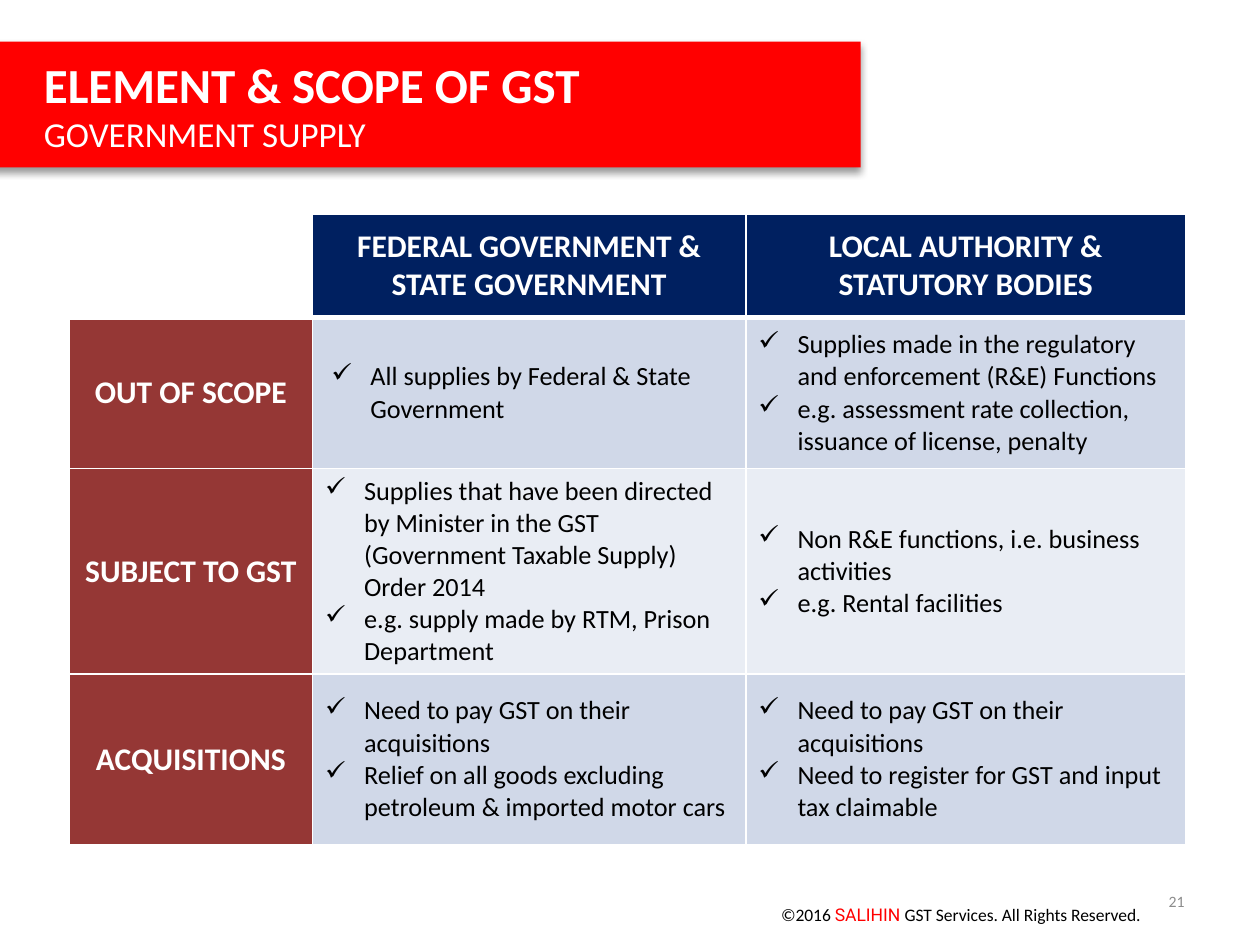
from lxml import etree
from pptx import Presentation
from pptx.dml.color import RGBColor
from pptx.enum.shapes import MSO_SHAPE
from pptx.enum.text import MSO_ANCHOR, PP_ALIGN
from pptx.oxml.ns import qn
from pptx.util import Inches, Pt

RECT = MSO_SHAPE.RECTANGLE
MIDDLE = MSO_ANCHOR.MIDDLE
LEFT, CENTER, RIGHT = PP_ALIGN.LEFT, PP_ALIGN.CENTER, PP_ALIGN.RIGHT

WHITE = RGBColor(0xFF, 0xFF, 0xFF)
BLACK = RGBColor(0, 0, 0)
RED = RGBColor(0xFF, 0, 0)
NAVY = RGBColor(0, 0x20, 0x60)
BRICK = RGBColor(0x95, 0x37, 0x35)
GRAY = RGBColor(0x8C, 0x8C, 0x8C)
BANDS = (RGBColor(0xD0, 0xD8, 0xE8), RGBColor(0xE9, 0xED, 0xF4))

TITLE = [("ELEMENT & SCOPE OF GST", 28, True), ("GOVERNMENT SUPPLY", 20, False)]
NOTICE = [
    ("©2016 ", "Calibri", BLACK),
    ("SALIHIN ", "Roboto", RED),
    ("GST Services. All Rights Reserved.", "Calibri", BLACK),
]
PAGE = "21"
COLS = [1.93, 3.44, 3.49]
ROWS = [0.82, 1.2, 1.6, 1.35]
GRID = [
    [
        [],
        ["FEDERAL GOVERNMENT &", "STATE GOVERNMENT"],
        ["LOCAL AUTHORITY & STATUTORY BODIES"],
    ],
    [
        ["OUT OF SCOPE"],
        ["All supplies by Federal & State Government"],
        [
            "Supplies made in the regulatory and enforcement (R&E) Functions",
            "e.g. assessment rate collection, issuance of license, penalty",
        ],
    ],
    [
        ["SUBJECT TO GST"],
        [
            "Supplies that have been directed by Minister in the GST "
            "(Government Taxable Supply) Order 2014",
            "e.g. supply made by RTM, Prison Department",
        ],
        ["Non R&E functions, i.e. business activities", "e.g. Rental facilities"],
    ],
    [
        ["ACQUISITIONS"],
        [
            "Need to pay GST on their acquisitions",
            "Relief on all goods excluding petroleum & imported motor cars",
        ],
        [
            "Need to pay GST on their acquisitions",
            "Need to register for GST and input tax claimable",
        ],
    ],
]


def style(para, size, color, bold=False, align=LEFT):
    para.alignment = align
    font = para.font
    font.name, font.size, font.bold = "Calibri", Pt(size), bold
    font.color.rgb = color


def indent(para, left, first=0):
    props = para._p.get_or_add_pPr()
    props.set("marL", str(Inches(left)))
    props.set("indent", str(Inches(first)))
    return props


def lines(frame, texts):
    for i, text in enumerate(texts):
        para = frame.paragraphs[0] if i == 0 else frame.add_paragraph()
        para.text = text
        yield para


def box(slide, left, top, width, height):
    frame = slide.shapes.add_textbox(*map(Inches, (left, top, width, height))).text_frame
    frame.word_wrap = True
    frame.vertical_anchor = MIDDLE
    return frame


def border(cell, widths):
    props = cell._tc.get_or_add_tcPr()
    for side, width in widths.items():
        line = etree.SubElement(props, qn(f"a:ln{side}"), w=str(Pt(width)))
        fill = etree.SubElement(line, qn("a:solidFill"))
        etree.SubElement(fill, qn("a:srgbClr"), val=str(WHITE))


def banner(slide):
    shape = slide.shapes.add_shape(RECT, *map(Inches, (-0.25, 0.33, 7.08, 1)))
    shape.fill.solid()
    shape.fill.fore_color.rgb = RED
    shape.line.fill.background()
    shape.shadow.inherit = False
    glow = etree.SubElement(
        shape._element.spPr.find(qn("a:effectLst")), qn("a:outerShdw"),
        blurRad=str(Pt(4)), dist=str(Pt(3)), dir="5400000", rotWithShape="0")
    tint = etree.SubElement(glow, qn("a:srgbClr"), val=str(BLACK))
    etree.SubElement(tint, qn("a:alpha"), val="40000")
    frame = shape.text_frame
    frame.vertical_anchor = MIDDLE
    for para, (_, size, bold) in zip(lines(frame, [t[0] for t in TITLE]), TITLE):
        indent(para, 0.5)
        style(para, size, WHITE, bold)


def fill_cell(cell, row, col, texts):
    head = row == 0 or col == 0
    border(cell, {"L": 1, "R": 1, "T": 3 if row == 1 else 1, "B": 3 if row == 0 else 1})
    cell.fill.solid()
    if row == 0:
        color = NAVY if col else WHITE
    else:
        color = BANDS[(row - 1) % 2] if col else BRICK
    cell.fill.fore_color.rgb = color
    cell.vertical_anchor = MIDDLE
    for para in lines(cell.text_frame, texts):
        if head:
            style(para, 18, WHITE, True, CENTER)
        else:
            props = indent(para, 0.31, -0.31)
            etree.SubElement(props, qn("a:buChar"), char="✓")
            style(para, 15, BLACK)


def matrix(slide):
    table = slide.shapes.add_table(
        len(ROWS), len(COLS), Inches(0.55), Inches(1.7),
        Inches(sum(COLS)), Inches(sum(ROWS))).table
    for col, width in zip(table.columns, COLS):
        col.width = Inches(width)
    for row, height in zip(table.rows, ROWS):
        row.height = Inches(height)
    for r, cells in enumerate(GRID):
        for c, texts in enumerate(cells):
            fill_cell(table.cell(r, c), r, c, texts)
    inset = table.cell(1, 1)
    inset.margin_left = inset.margin_right = Inches(0.15)
    inset.margin_top = inset.margin_bottom = Inches(0.15)


def footer(slide):
    para = box(slide, 6.1, 7.06, 3.21, 0.4).paragraphs[0]
    for text, name, color in NOTICE:
        run = para.add_run()
        run.text = text
        run.font.name, run.font.size = name, Pt(10)
        run.font.color.rgb = color
    para = box(slide, 7.17, 6.95, 2.33, 0.4).paragraphs[0]
    para.text = PAGE
    style(para, 9, GRAY, align=RIGHT)


def main():
    deck = Presentation()
    deck.slide_width, deck.slide_height = Inches(10), Inches(7.5)
    slide = deck.slides.add_slide(deck.slide_layouts[6])
    banner(slide)
    matrix(slide)
    footer(slide)
    deck.save("out.pptx")


if __name__ == "__main__":
    main()
